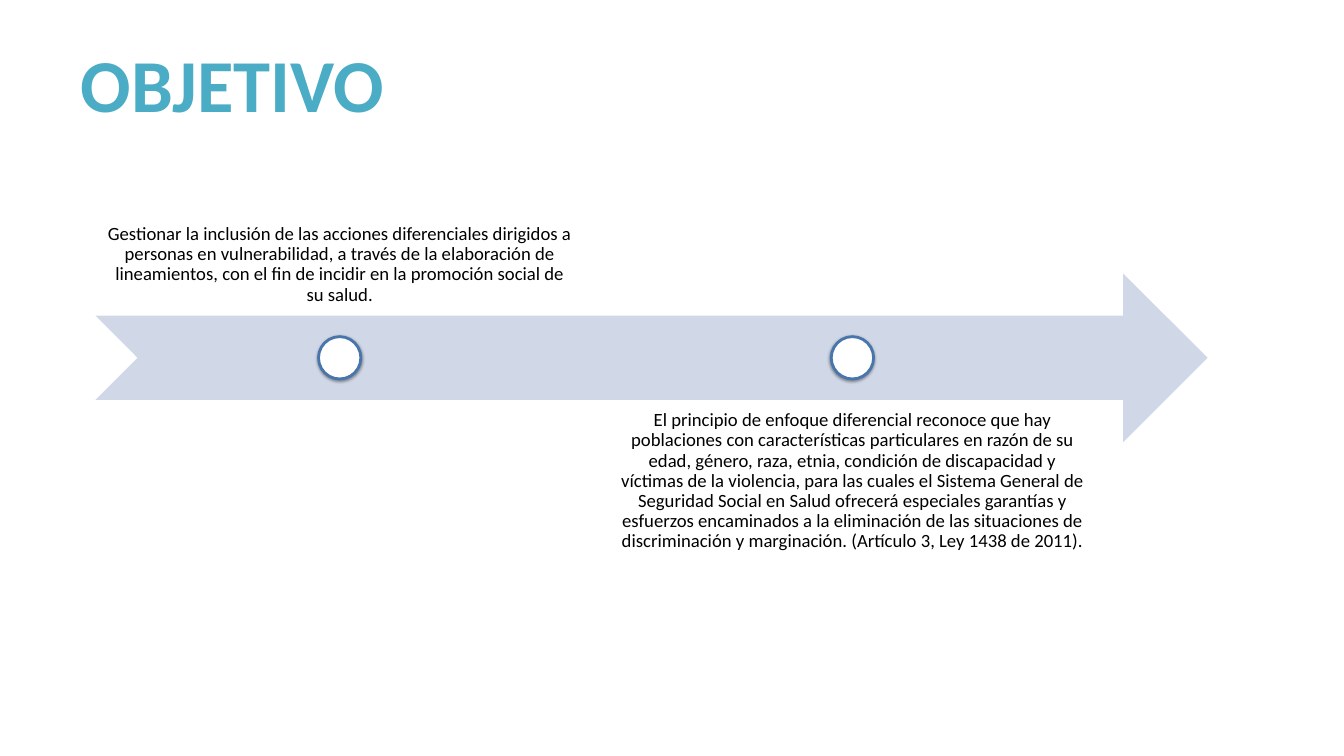
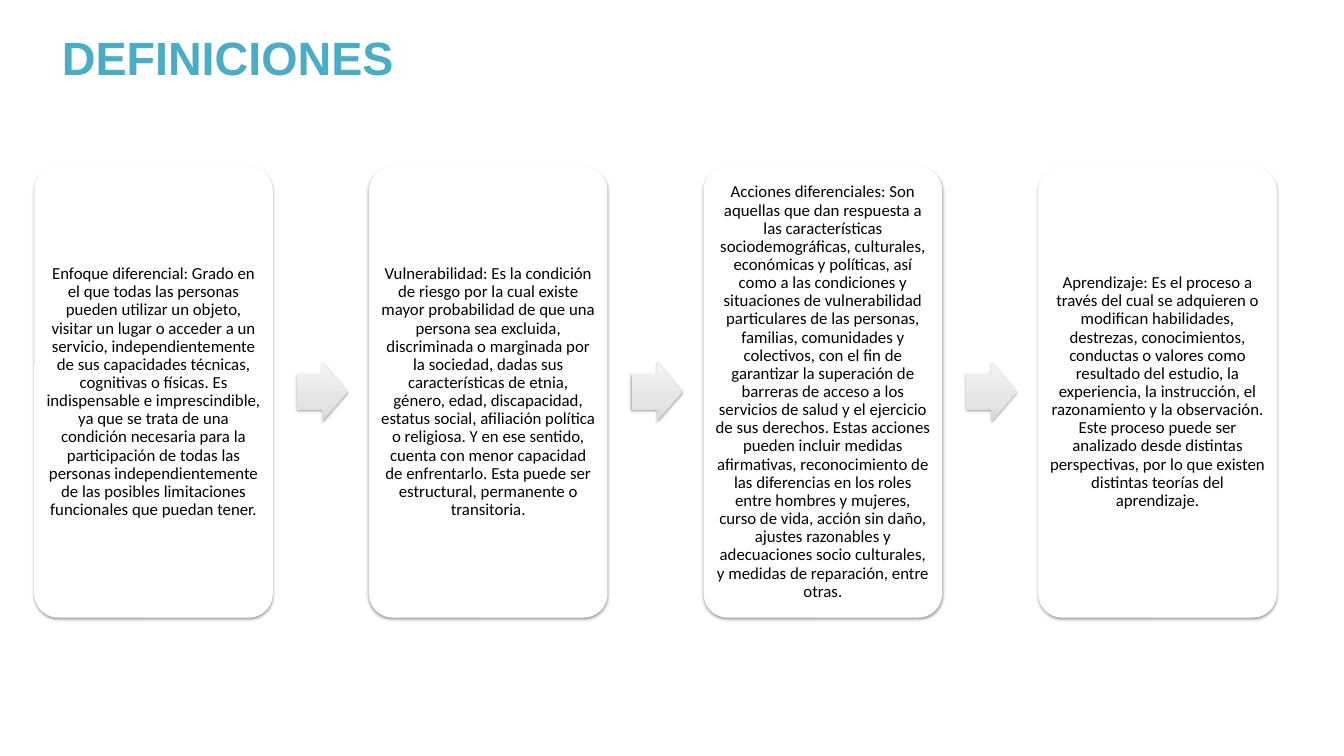
"""Build the two slides on the objective and the definitions of the differential approach."""
from dataclasses import dataclass

import lxml.etree
import pptx
import pptx.dml.color
import pptx.enum.shapes
import pptx.enum.text
import pptx.oxml
import pptx.oxml.ns
import pptx.util

Inches = pptx.util.Inches
Pt = pptx.util.Pt
Color = pptx.dml.color.RGBColor.from_string
Shape = pptx.enum.shapes.MSO_SHAPE
Align = pptx.enum.text.PP_ALIGN
Anchor = pptx.enum.text.MSO_ANCHOR
qn = pptx.oxml.ns.qn


@dataclass(frozen=True)
class Theme:
    title: str = "4BACC6"
    text: str = "000000"
    white: str = "FFFFFF"
    band: str = "D0D8E8"
    ring: str = "4875AC"
    arrow_stops: tuple = ((0, "DADADA"), (35, "E5E5E5"), (100, "F5F5F5"))
    body_font: str = "Calibri"
    timeline_size: int = 20
    card_size: int = 18


theme = Theme()


def add_figure(page, kind, left, top, width, height, color, shadow=True):
    figure = page.shapes.add_shape(kind, Inches(left), Inches(top), Inches(width), Inches(height))
    figure.shadow.inherit = False
    figure.fill.solid()
    figure.fill.fore_color.rgb = Color(color)
    figure.line.fill.background()
    if shadow:
        effects = figure._element.spPr.find(qn("a:effectLst"))
        outer = lxml.etree.SubElement(effects, qn("a:outerShdw"), blurRad="40000", dist="20000",
                                      dir="5400000", rotWithShape="0")
        tint = lxml.etree.SubElement(outer, qn("a:srgbClr"), val="000000")
        lxml.etree.SubElement(tint, qn("a:alpha"), val="38000")
    return figure


def write_body(box, text, size, inset, anchor):
    frame = box.text_frame
    frame.word_wrap = True
    frame.vertical_anchor = anchor
    frame.margin_left = frame.margin_right = frame.margin_top = frame.margin_bottom = Inches(inset)
    para = frame.paragraphs[0]
    para.text = text
    para.alignment = Align.CENTER
    para.line_spacing = 0.9
    para.font.name = theme.body_font
    para.font.size = Pt(size)
    para.font.color.rgb = Color(theme.text)


deck = pptx.Presentation()
deck.slide_width = Inches(20)
deck.slide_height = Inches(11.25)

titles = [
    ("OBJETIVO", (1.08, 0.51, 4.76, 1.45), "Calibri", 80, Align.CENTER, False, (0.1, 0.05), None),
    ("DEFINICIONES", (0.92, 0.46, 10.72, 0.8), "Arial", 50, Align.LEFT, True, (0, 0), Pt(57.5)),
]
pages = []
for text, place, font, size, alignment, wrap, (side, edge), spacing in titles:
    page = deck.slides.add_slide(deck.slide_layouts[5])
    title = page.shapes.title
    title.left, title.top, title.width, title.height = map(Inches, place)
    frame = title.text_frame
    frame.word_wrap = wrap
    frame.auto_size = pptx.enum.text.MSO_AUTO_SIZE.SHAPE_TO_FIT_TEXT
    frame.vertical_anchor = Anchor.TOP
    frame.margin_left = frame.margin_right = Inches(side)
    frame.margin_top = frame.margin_bottom = Inches(edge)
    para = frame.paragraphs[0]
    para.text = text
    para.alignment = alignment
    para.line_spacing = spacing
    para.font.name = font
    para.font.size = Pt(size)
    para.font.bold = True
    para.font.color.rgb = Color(theme.title)
    pages.append(page)

objective, definitions = pages

add_figure(objective, Shape.NOTCHED_RIGHT_ARROW, 1.42, 4.07, 16.55, 2.51, theme.band, shadow=False)
milestones = [
    (2.19, Anchor.BOTTOM,
     "Gestionar la inclusión de las acciones diferenciales dirigidos a personas en vulnerabilidad, "
     "a través de la elaboración de lineamientos, con el fin de incidir en la promoción social de su salud."),
    (5.95, Anchor.TOP,
     "El principio de enfoque diferencial reconoce que hay poblaciones con características particulares "
     "en razón de su edad, género, raza, etnia, condición de discapacidad y víctimas de la violencia, para "
     "las cuales el Sistema General de Seguridad Social en Salud ofrecerá especiales garantías y esfuerzos "
     "encaminados a la eliminación de las situaciones de discriminación y marginación. "
     "(Artículo 3, Ley 1438 de 2011)."),
]
milestone_width, marker_size = 7.27, 0.63
for index, (top, anchor, text) in enumerate(milestones):
    left = 1.42 + 7.63 * index
    box = objective.shapes.add_textbox(Inches(left), Inches(top), Inches(milestone_width), Inches(2.51))
    write_body(box, text, theme.timeline_size, 0.16, anchor)
    marker = add_figure(objective, Shape.OVAL, left + (milestone_width - marker_size) / 2, 5.01,
                        marker_size, marker_size, theme.white)
    marker.line.color.rgb = Color(theme.ring)
    marker.line.width = Pt(3)

concepts = [
    "Enfoque diferencial: Grado en el que todas las personas pueden utilizar un objeto, visitar un lugar "
    "o acceder a un servicio, independientemente de sus capacidades técnicas, cognitivas o físicas. Es "
    "indispensable e imprescindible, ya que se trata de una condición necesaria para la participación de "
    "todas las personas independientemente de las posibles limitaciones funcionales que puedan tener.",
    "Vulnerabilidad: Es la condición de riesgo por la cual existe mayor probabilidad de que una persona "
    "sea excluida, discriminada o marginada por la sociedad, dadas sus características de etnia, género, "
    "edad, discapacidad, estatus social, afiliación política o religiosa. Y en ese sentido, cuenta con "
    "menor capacidad de enfrentarlo. Esta puede ser estructural, permanente o transitoria.",
    "Acciones diferenciales: Son aquellas que dan respuesta a las características sociodemográficas, "
    "culturales, económicas y políticas, así como a las condiciones y situaciones de vulnerabilidad "
    "particulares de las personas, familias, comunidades y colectivos, con el fin de garantizar la "
    "superación de barreras de acceso a los servicios de salud y el ejercicio de sus derechos. Estas "
    "acciones pueden incluir medidas afirmativas, reconocimiento de las diferencias en los roles entre "
    "hombres y mujeres, curso de vida, acción sin daño, ajustes razonables y adecuaciones socio culturales, "
    "y medidas de reparación, entre otras.",
    "Aprendizaje: Es el proceso a través del cual se adquieren o modifican habilidades, destrezas, "
    "conocimientos, conductas o valores como resultado del estudio, la experiencia, la instrucción, el "
    "razonamiento y la observación. Este proceso puede ser analizado desde distintas perspectivas, por lo "
    "que existen distintas teorías del aprendizaje.",
]
for index, text in enumerate(concepts):
    left = 0.51 + 4.98 * index
    if index:
        arrow = add_figure(definitions, Shape.RIGHT_ARROW, left - 1.07, 5.39, 0.75, 0.88, theme.white)
        arrow.adjustments[0] = 0.6
        arrow.fill.gradient()
        arrow.fill.gradient_angle = 90
        stops = arrow._element.spPr.find(qn("a:gradFill")).find(qn("a:gsLst"))
        for stop in list(stops):
            stops.remove(stop)
        for position, color in theme.arrow_stops:
            stop = lxml.etree.SubElement(stops, qn("a:gs"), pos=str(position * 1000))
            lxml.etree.SubElement(stop, qn("a:srgbClr"), val=color)
    card = add_figure(definitions, Shape.ROUNDED_RECTANGLE, left, 2.48, 3.55, 6.71, theme.white)
    card.adjustments[0] = 0.1
    write_body(card, text, theme.card_size, 0.07, Anchor.MIDDLE)

deck.save("out.pptx")
